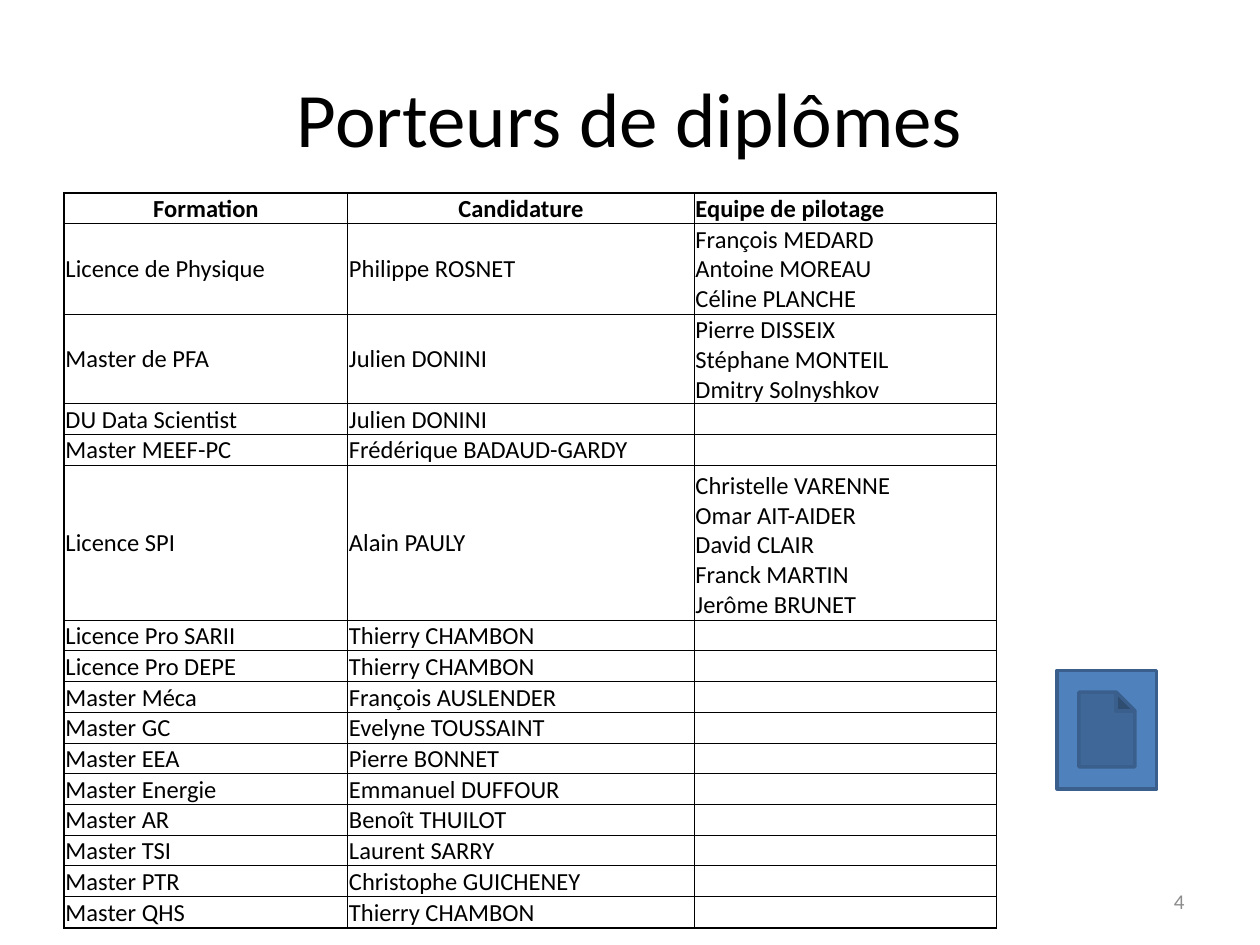
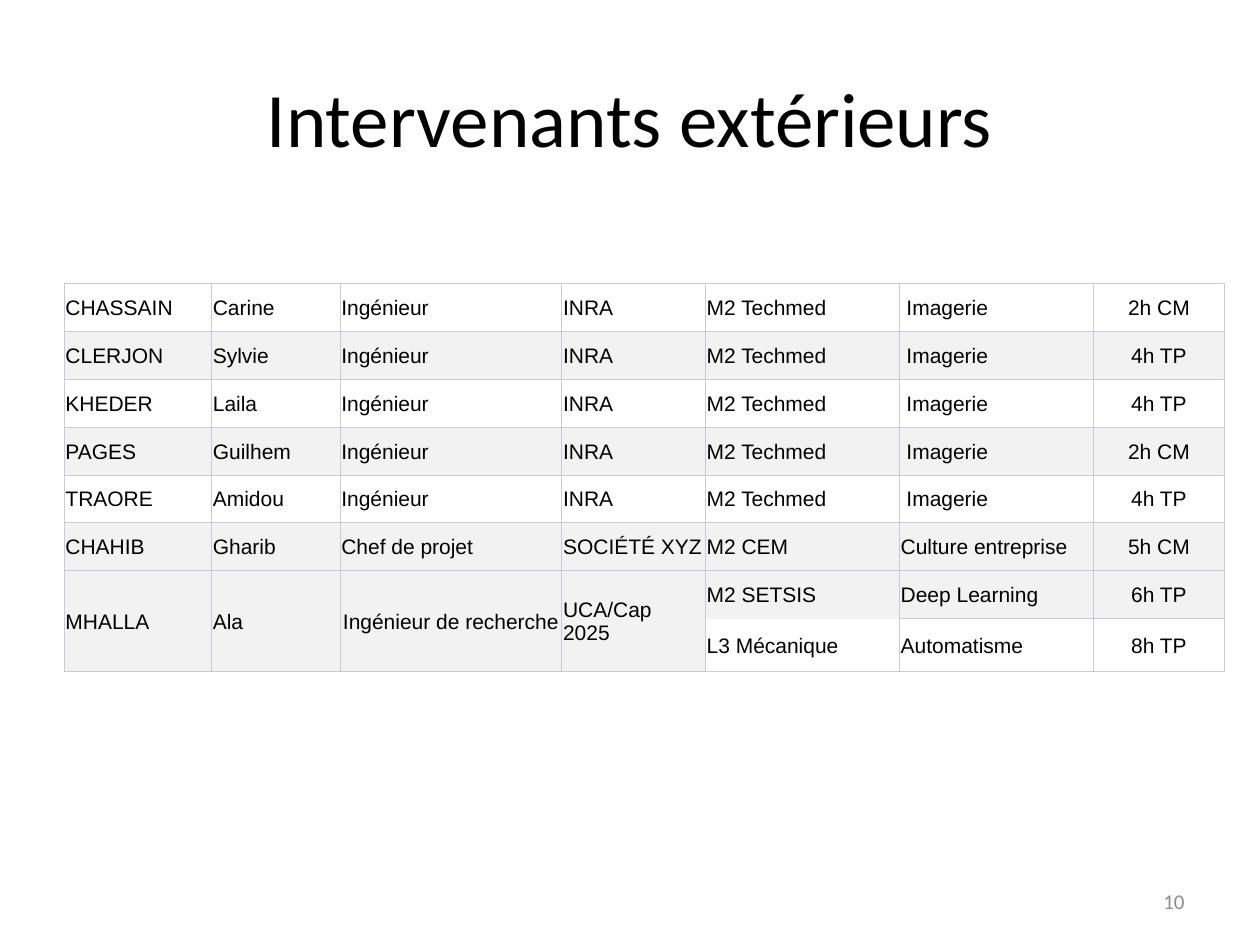
from lxml.etree import SubElement
from pptx import Presentation
from pptx.dml.color import RGBColor
from pptx.enum.shapes import MSO_SHAPE
from pptx.enum.text import MSO_ANCHOR, PP_ALIGN
from pptx.oxml.ns import qn
from pptx.util import Inches, Pt

BLACK = RGBColor(0x00, 0x00, 0x00)
GREY = RGBColor(0x8C, 0x8C, 0x8C)
BLUE = RGBColor(0x4F, 0x81, 0xBD)
DARK_BLUE = RGBColor(0x3A, 0x5F, 0x8C)
LILAC = RGBColor(0xCA, 0xC9, 0xD9)
BAND = RGBColor(0xF2, 0xF2, 0xF2)
NO_STYLE = "{2D5ABB26-0587-4C30-8999-92F81FD0307C}"

DIPLOMAS = [
    ("Formation", "Candidature", "Equipe de pilotage"),
    ("Licence de Physique", "Philippe ROSNET", "François MEDARD\nAntoine MOREAU\nCéline PLANCHE"),
    ("Master de PFA", "Julien DONINI", "Pierre DISSEIX\nStéphane MONTEIL\nDmitry Solnyshkov"),
    ("DU Data Scientist", "Julien DONINI", ""),
    ("Master MEEF-PC", "Frédérique BADAUD-GARDY", ""),
    ("Licence SPI", "Alain PAULY",
     "Christelle VARENNE\nOmar AIT-AIDER\nDavid CLAIR\nFranck MARTIN\nJerôme BRUNET"),
    ("Licence Pro SARII", "Thierry CHAMBON", ""),
    ("Licence Pro DEPE", "Thierry CHAMBON", ""),
    ("Master Méca", "François AUSLENDER", ""),
    ("Master GC", "Evelyne TOUSSAINT", ""),
    ("Master EEA", "Pierre BONNET", ""),
    ("Master Energie", "Emmanuel DUFFOUR", ""),
    ("Master AR", "Benoît THUILOT", ""),
    ("Master TSI", "Laurent SARRY", ""),
    ("Master PTR", "Christophe GUICHENEY", ""),
    ("Master QHS", "Thierry CHAMBON", ""),
]
IMAGING = ("Ingénieur", "INRA", "M2 Techmed", " Imagerie")
SPEAKERS = [
    ("CHASSAIN", "Carine", *IMAGING, "2h CM"),
    ("CLERJON", "Sylvie", *IMAGING, "4h TP"),
    ("KHEDER", "Laila", *IMAGING, "4h TP"),
    ("PAGES", "Guilhem", *IMAGING, "2h CM"),
    ("TRAORE", "Amidou", *IMAGING, "4h TP"),
    ("CHAHIB", "Gharib", "Chef de projet", "SOCIÉTÉ XYZ", "M2 CEM", "Culture entreprise", "5h CM"),
    ("MHALLA", "Ala", "Ingénieur de recherche", "UCA/Cap 2025", "M2 SETSIS", "Deep Learning", "6h TP"),
    ("", "", "", "", "L3 Mécanique", "Automatisme", "8h TP"),
]


def write(paragraph, text, size, font, color=BLACK, align=PP_ALIGN.LEFT, bold=False):
    paragraph.alignment = align
    if not text:
        SubElement(paragraph._p, qn("a:endParaRPr"), sz=str(size * 100))
        return
    for index, line in enumerate(text.split("\n")):
        if index:
            paragraph.add_line_break()
        run = paragraph.add_run()
        run.text = line
        run.font.size = Pt(size)
        run.font.name = font
        run.font.bold = bold
        run.font.color.rgb = color


def draw_border(cell, side, color, width):
    line = SubElement(cell._tc.get_or_add_tcPr(), qn(f"a:ln{side}"), w=str(Pt(width)))
    if width:
        fill = SubElement(line, qn("a:solidFill"))
        SubElement(fill, qn("a:srgbClr"), val=str(color))
    else:
        SubElement(line, qn("a:noFill"))


prs = Presentation()
prs.slide_width = Inches(10)
prs.slide_height = Inches(7.5)

pages = [
    dict(title="Porteurs de diplômes", number="4", rows=DIPLOMAS, top=1.53,
         widths=[2.25, 2.75, 2.4],
         heights=[0.24, 0.72, 0.71, 0.24, 0.24, 1.23] + [0.24] * 9 + [0.25],
         font="Calibri", size=14, line=BLACK, outer=1, header=True,
         banded=(), merged=(), centred={(0, 0), (0, 1)}, bottom_column=2, open_cells={}),
    dict(title="Intervenants extérieurs", number="10", rows=SPEAKERS, top=2.25,
         widths=[1.17, 1.02, 1.76, 1.14, 1.54, 1.54, 1.04],
         heights=[0.38] * 7 + [0.42],
         font="Arial", size=12, line=LILAC, outer=0.5, header=False,
         banded=(1, 3, 5, 6), merged=range(4),
         centred={(6, 2)} | {(row, 6) for row in range(8)}, bottom_column=None,
         open_cells={(6, 4): "B", (7, 4): "T"}),
]

for page in pages:
    slide = prs.slides.add_slide(prs.slide_layouts[5])
    title = slide.shapes.title
    title.left, title.top, title.width, title.height = map(Inches, (0.5, 0.3, 9, 1.25))
    title.text_frame.vertical_anchor = MSO_ANCHOR.MIDDLE
    write(title.text_frame.paragraphs[0], page["title"], 44, "Calibri", align=PP_ALIGN.CENTER)

    number = slide.shapes.add_textbox(*map(Inches, (7.17, 6.95, 2.33, 0.4))).text_frame
    number.word_wrap = True
    number.vertical_anchor = MSO_ANCHOR.MIDDLE
    write(number.paragraphs[0], page["number"], 12, "Calibri", GREY, PP_ALIGN.RIGHT)

    rows, widths, heights = page["rows"], page["widths"], page["heights"]
    last_row, last_column = len(rows) - 1, len(widths) - 1
    grid = slide.shapes.add_table(len(rows), len(widths), Inches(0.51), Inches(page["top"]),
                                  Inches(sum(widths)), Inches(sum(heights))).table
    grid.first_row = grid.horz_banding = False
    grid._tbl.tblPr.find(qn("a:tableStyleId")).text = NO_STYLE
    for column, width in zip(grid.columns, widths):
        column.width = Inches(width)
    for row, height in zip(grid.rows, heights):
        row.height = Inches(height)

    for r, texts in enumerate(rows):
        for c, text in enumerate(texts):
            cell = grid.cell(r, c)
            cell.margin_left = cell.margin_right = cell.margin_top = Inches(0.01)
            cell.margin_bottom = 0
            at_bottom = c == page["bottom_column"]
            cell.vertical_anchor = MSO_ANCHOR.BOTTOM if at_bottom else MSO_ANCHOR.MIDDLE
            align = PP_ALIGN.CENTER if (r, c) in page["centred"] else PP_ALIGN.LEFT
            write(cell.text_frame.paragraphs[0], text, page["size"], page["font"],
                  align=align, bold=page["header"] and r == 0)
            edges = {"L": c == 0, "R": c == last_column, "T": r == 0, "B": r == last_row}
            for side, is_outer in edges.items():
                width = page["outer"] if is_outer else 0.5
                if page["open_cells"].get((r, c)) == side:
                    width = 0
                draw_border(cell, side, page["line"], width)
            if r in page["banded"]:
                cell.fill.solid()
                cell.fill.fore_color.rgb = BAND
            else:
                cell.fill.background()
    for c in page["merged"]:
        grid.cell(last_row - 1, c).merge(grid.cell(last_row, c))

document_button = prs.slides[0].shapes.add_shape(
    MSO_SHAPE.ACTION_BUTTON_DOCUMENT, *map(Inches, (8.39, 5.32, 0.79, 0.94)))
document_button.shadow.inherit = False
document_button.fill.solid()
document_button.fill.fore_color.rgb = BLUE
document_button.line.color.rgb = DARK_BLUE
document_button.line.width = Pt(2)

prs.save("out.pptx")
